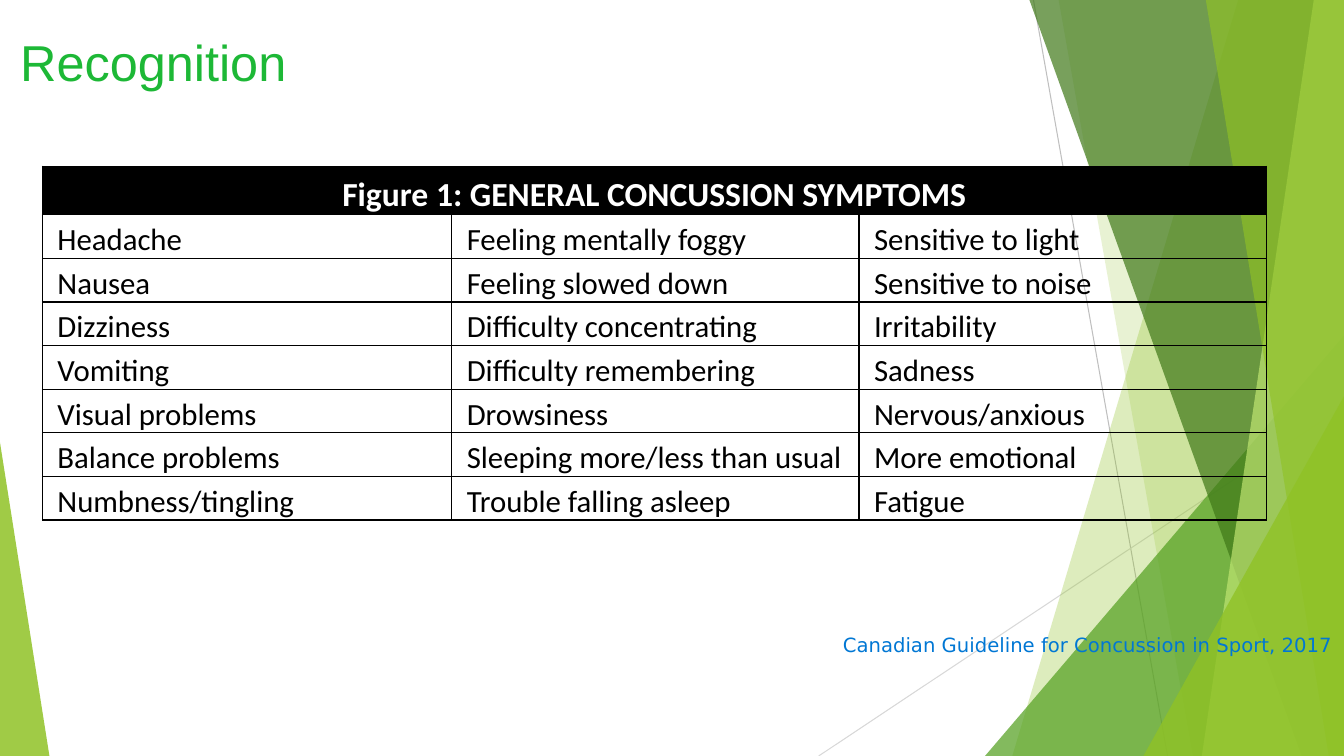
from lxml.etree import SubElement
from pptx import Presentation
from pptx.dml.color import RGBColor
from pptx.enum.shapes import MSO_CONNECTOR, MSO_SHAPE
from pptx.enum.text import MSO_ANCHOR, MSO_AUTO_SIZE, PP_ALIGN
from pptx.oxml.ns import qn
from pptx.util import Inches, Pt

W, H = 13.33, 7.5
COLORS = {
    "lime": "90C226", "green": "54A021", "forest": "3F7818", "pale": "BFE471",
    "gray": "BFBFBF", "silver": "D8D8D8", "title": "1DB836", "blue": "0077D4",
    "black": "000000", "white": "FFFFFF",
}


def paint(s, color, alpha):
    s.shadow.inherit = False
    s.line.fill.background()
    s.fill.solid()
    s.fill.fore_color.rgb = RGBColor.from_string(COLORS[color])
    rgb = s.fill._xPr.find(qn("a:solidFill")).find(qn("a:srgbClr"))
    SubElement(rgb, qn("a:alpha"), val=str(alpha * 1000))


def write(tf, text, font, size, color, bold=False):
    p = tf.paragraphs[0]
    r = p.add_run()
    r.text = text
    for name, value in {"name": font, "size": Pt(size), "bold": bold}.items():
        setattr(r.font, name, value)
    r.font.color.rgb = RGBColor.from_string(COLORS[color])
    return p


prs = Presentation()
prs.slide_width, prs.slide_height = Inches(W), Inches(H)
slide = prs.slides.add_slide(prs.slide_layouts[5])
shapes = slide.shapes

# Thin background lines
for x1, y1, x2, y2, color in [(10.25, 0, 11.58, H, "gray"), (W, 4.03, 8.12, H, "silver")]:
    s = shapes.add_connector(MSO_CONNECTOR.STRAIGHT, *map(Inches, (x1, y1, x2, y2)))
    s.line.color.rgb = RGBColor.from_string(COLORS[color])
    s.line.width = Pt(0.75)
    SubElement(s._element.spPr, qn("a:effectLst"))

# Facets: bands run from a slanted left edge to the slide's right edge,
# triangles stand on the slide's bottom edge
facets = [
    ("band", 12.28, 10.04, "lime", 30),
    ("band", 10.5, 11.83, "lime", 20),
    ("triangle", (9.77, 3.56, 4.17), 1, "green", 72),
    ("band", 10.21, 12.91, "forest", 70),
    ("band", 13.03, 11.92, "pale", 70),
    ("band", 11.96, 13.18, "lime", 65),
    ("triangle", (11.34, 1.99, 3.57), 1, "lime", 80),
    ("triangle", (0, 0.49, 3.11), 0, "lime", 85),
]
for kind, a, b, color, alpha in facets:
    if kind == "band":
        outline = shapes.build_freeform(Inches(a), 0)
        corners = [(W, 0), (W, H), (b, H)]
        outline.add_line_segments([(Inches(x), Inches(y)) for x, y in corners], close=True)
        s = outline.convert_to_shape()
    else:
        left, width, height = a
        s = shapes.add_shape(MSO_SHAPE.ISOSCELES_TRIANGLE,
                             *map(Inches, (left, H - height, width, height)))
        s.adjustments[0] = b
    paint(s, color, alpha)

# Title and source line
title = shapes.title
title.left, title.top, title.width, title.height = map(Inches, (0.19, 0.3, 4.73, 0.62))
source = shapes.add_textbox(*map(Inches, (8.35, 6.27, 4.9, 0.26)))
frame_format = {
    "margin_left": Inches(0.01), "margin_right": 0, "margin_top": Inches(0.01),
    "margin_bottom": 0, "word_wrap": True, "auto_size": MSO_AUTO_SIZE.SHAPE_TO_FIT_TEXT,
    "vertical_anchor": MSO_ANCHOR.TOP,
}
for s, text, font, size, color in [
    (title, "Recognition", "Arial", 36, "title"),
    (source, "Canadian Guideline for Concussion in Sport, 2017", "DejaVu Sans", 14, "blue"),
]:
    for name, value in frame_format.items():
        setattr(s.text_frame, name, value)
    write(s.text_frame, text, font, size, color).alignment = PP_ALIGN.LEFT

# Symptom table
rows = [
    ("Figure 1: GENERAL CONCUSSION SYMPTOMS", "", ""),
    ("Headache", "Feeling mentally foggy", "Sensitive to light"),
    ("Nausea", "Feeling slowed down", "Sensitive to noise"),
    ("Dizziness", "Difficulty concentrating", "Irritability"),
    ("Vomiting", "Difficulty remembering", "Sadness"),
    ("Visual problems", "Drowsiness", "Nervous/anxious"),
    ("Balance problems", "Sleeping more/less than usual", "More emotional"),
    ("Numbness/tingling", "Trouble falling asleep", "Fatigue"),
]
col_widths = [4.06, 4.04, 4.04]
head_h, row_h = 0.43, 0.39
table = shapes.add_table(len(rows), len(col_widths), Inches(0.42), Inches(1.65),
                         Inches(sum(col_widths)),
                         Inches(head_h + row_h * (len(rows) - 1))).table
table.first_row = table.horz_banding = False
for col, width in zip(table.columns, col_widths):
    col.width = Inches(width)
table.cell(0, 0).merge(table.cell(0, 2))

for i, row in enumerate(rows):
    header = i == 0
    table.rows[i].height = Inches(head_h if header else row_h)
    for j, text in enumerate(row):
        cell = table.cell(i, j)
        cell.margin_left = 0 if header else Inches(0.15)
        cell.margin_right = cell.margin_top = cell.margin_bottom = 0
        tcPr = cell._tc.get_or_add_tcPr()
        for side in ("a:lnL", "a:lnR", "a:lnT", "a:lnB"):
            ln = SubElement(tcPr, qn(side), w=str(Pt(1)))
            SubElement(SubElement(ln, qn("a:solidFill")), qn("a:srgbClr"), val=COLORS["black"])
        if header:
            cell.fill.solid()
            cell.fill.fore_color.rgb = RGBColor.from_string(COLORS["black"])
        else:
            cell.fill.background()
        if text:
            look = (24, "white", True) if header else (22, "black")
            p = write(cell.text_frame, text, "Calibri", *look)
            p.alignment = PP_ALIGN.CENTER if header else PP_ALIGN.LEFT
            p.line_spacing = 1.2 if header else 1.18

prs.save("out.pptx")
